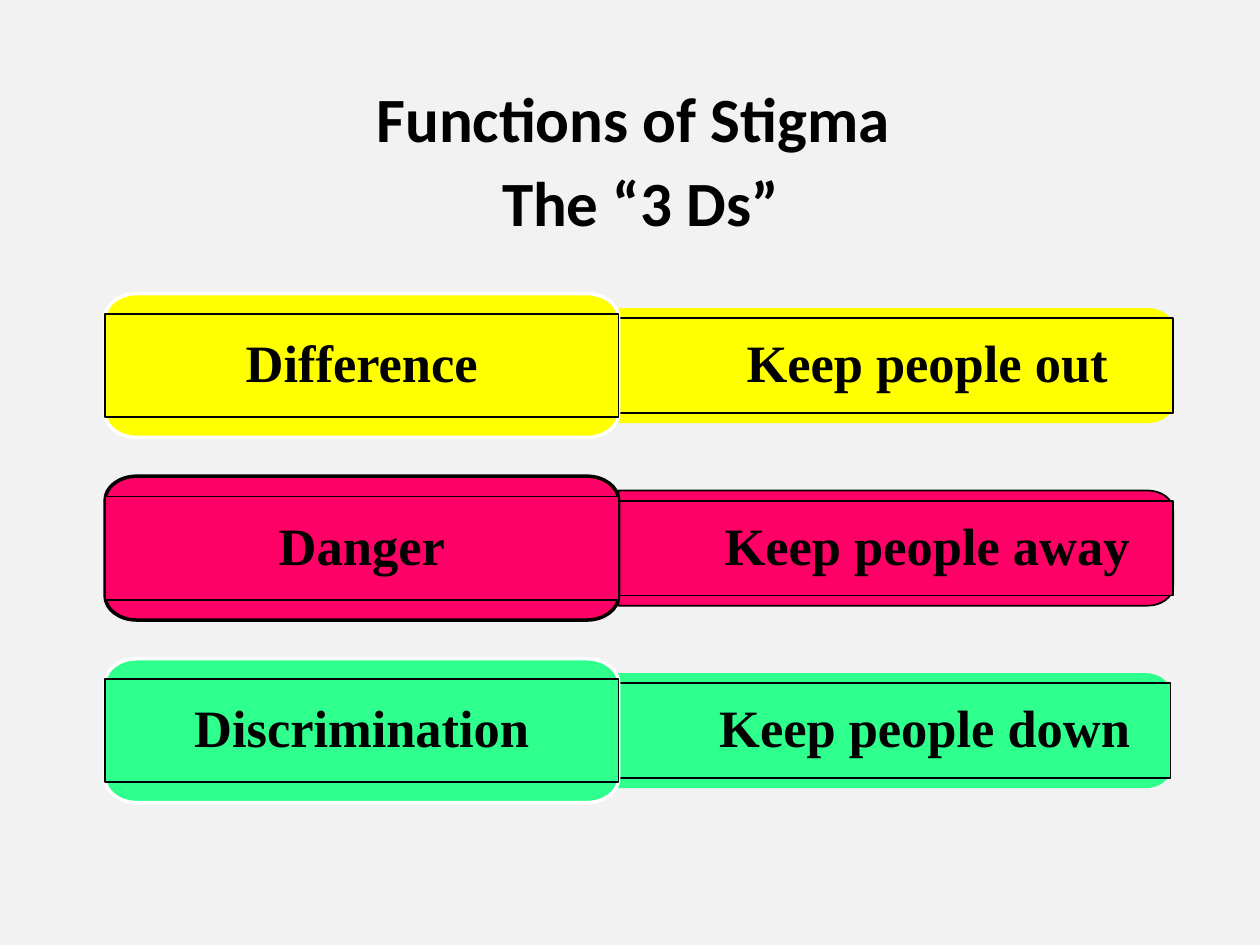
"""Build the slide on the functions of stigma, the 3 Ds."""
from lxml import etree
from pptx import Presentation
from pptx.dml.color import RGBColor
from pptx.enum.shapes import MSO_SHAPE
from pptx.enum.text import MSO_ANCHOR, PP_ALIGN
from pptx.oxml.ns import qn
from pptx.util import Cm, Pt

RECT = MSO_SHAPE.RECTANGLE
CENTER = PP_ALIGN.CENTER
TOP, MIDDLE = MSO_ANCHOR.TOP, MSO_ANCHOR.MIDDLE

THEME = {
    "background": RGBColor(0xF2, 0xF2, 0xF2),
    "ink": RGBColor(0, 0, 0),
    "white": RGBColor(255, 255, 255),
    "yellow": RGBColor(0xFF, 0xFF, 0),
    "pink": RGBColor(0xFF, 0, 0x66),
    "green": RGBColor(0x2F, 0xFF, 0x8D),
    "title_font": "Calibri",
    "title_size": Pt(36),
    "label_font": "Times New Roman",
    "label_size": Pt(30),
}


def add_panel(shapes, x, cy, w, h, rx, ry, sides, color, line, line_width):
    """Add a panel with elliptical corners on the named sides."""
    left, right, top, bottom = x, x + w, cy - h / 2, cy + h / 2
    k = 0.45
    points, curves = [], []
    for side, px, py, dx, dy, vertical in (
            ("right", right, bottom, -rx, -ry, True),
            ("left", left, bottom, rx, -ry, False),
            ("left", left, top, rx, ry, True),
            ("right", right, top, -rx, ry, False)):
        if side not in sides:
            points.append((px, py))
            continue
        corner = [(px, py + dy), (px, py + k * dy), (px + k * dx, py), (px + dx, py)]
        curves.append(len(points))
        points += corner if vertical else corner[::-1]
    points = [(Cm(px), Cm(py)) for px, py in points]
    builder = shapes.build_freeform(*points[0])
    builder.add_line_segments(points[1:], close=True)
    sp = builder.convert_to_shape()
    segments = list(sp._element.iter(qn("a:lnTo")))
    for i in curves:
        curve = etree.Element(qn("a:cubicBezTo"))
        segments[i].addprevious(curve)
        for segment in segments[i:i + 3]:
            curve.append(segment[0])
            segment.getparent().remove(segment)
    sp.shadow.inherit = False
    sp.fill.solid()
    sp.fill.fore_color.rgb = color
    if line is None:
        sp.line.fill.background()
    else:
        sp.line.color.rgb = line
        sp.line.width = Pt(line_width)


def add_label(shapes, text, x, cy, w, h, inset, color, level):
    """Add an outlined text band centred on cy."""
    sp = shapes.add_shape(RECT, Cm(x), Cm(cy - h / 2), Cm(w), Cm(h))
    sp.shadow.inherit = False
    sp.fill.solid()
    sp.fill.fore_color.rgb = color
    sp.line.color.rgb = THEME["ink"]
    sp.line.width = Pt(1)
    tf = sp.text_frame
    tf.word_wrap = True
    tf.vertical_anchor = MIDDLE
    tf.margin_left = tf.margin_right = Cm(inset)
    tf.margin_top = tf.margin_bottom = Cm(inset)
    p = tf.paragraphs[0]
    p.text = text
    p.alignment = CENTER
    p.line_spacing = 0.9
    p.level = level
    p._p.get_or_add_pPr().set("marL", str(Cm(1.27 * level)))
    p.font.name = THEME["label_font"]
    p.font.size = THEME["label_size"]
    p.font.bold = True
    p.font.color.rgb = THEME["ink"]


prs = Presentation()
prs.slide_width, prs.slide_height = Cm(25.4), Cm(19.05)
s = prs.slides.add_slide(prs.slide_layouts[5])
s.background.fill.solid()
s.background.fill.fore_color.rgb = THEME["background"]

title = s.shapes.title
title.left, title.top, title.width, title.height = Cm(1.48), Cm(1.47), Cm(22.86), Cm(3.5)
tf = title.text_frame
tf.word_wrap = True
tf.vertical_anchor = TOP
tf.margin_left = tf.margin_right = tf.margin_top = tf.margin_bottom = Cm(0.13)
tf.text = "Functions of Stigma \nThe “3 Ds”"
for p in tf.paragraphs:
    p.alignment = CENTER
    p.font.name = THEME["title_font"]
    p.font.size = THEME["title_size"]
    p.font.bold = True
    p.font.color.rgb = THEME["ink"]
tf.paragraphs[1].space_before = Pt(5)

ROWS = (
    ("Difference", "Keep people out", "yellow", None, "white", 12.47),
    ("Danger", "Keep people away", "pink", "ink", "ink", 12.47),
    ("Discrimination", "Keep people down", "green", None, "white", 12.42),
)
for i, (term, purpose, fill, bar_line, tag_line, bar_x) in enumerate(ROWS):
    shapes = s.shapes.add_group_shape().shapes
    cy = 7.37 + 3.68 * i
    color = THEME[fill]
    add_panel(shapes, bar_x, cy, 11.18, 2.32, 0.51, 0.39, ("right",),
              color, THEME.get(bar_line), 1)
    add_label(shapes, purpose, bar_x, cy, 11.18, 1.91, 0.32, color, 1)
    add_panel(shapes, 2.12, cy, 10.35, 2.9, 0.64, 0.48, ("left", "right"),
              color, THEME[tag_line], 2)
    add_label(shapes, term, 2.12, cy, 10.35, 2.08, 0.44, color, 0)

prs.save("out.pptx")
